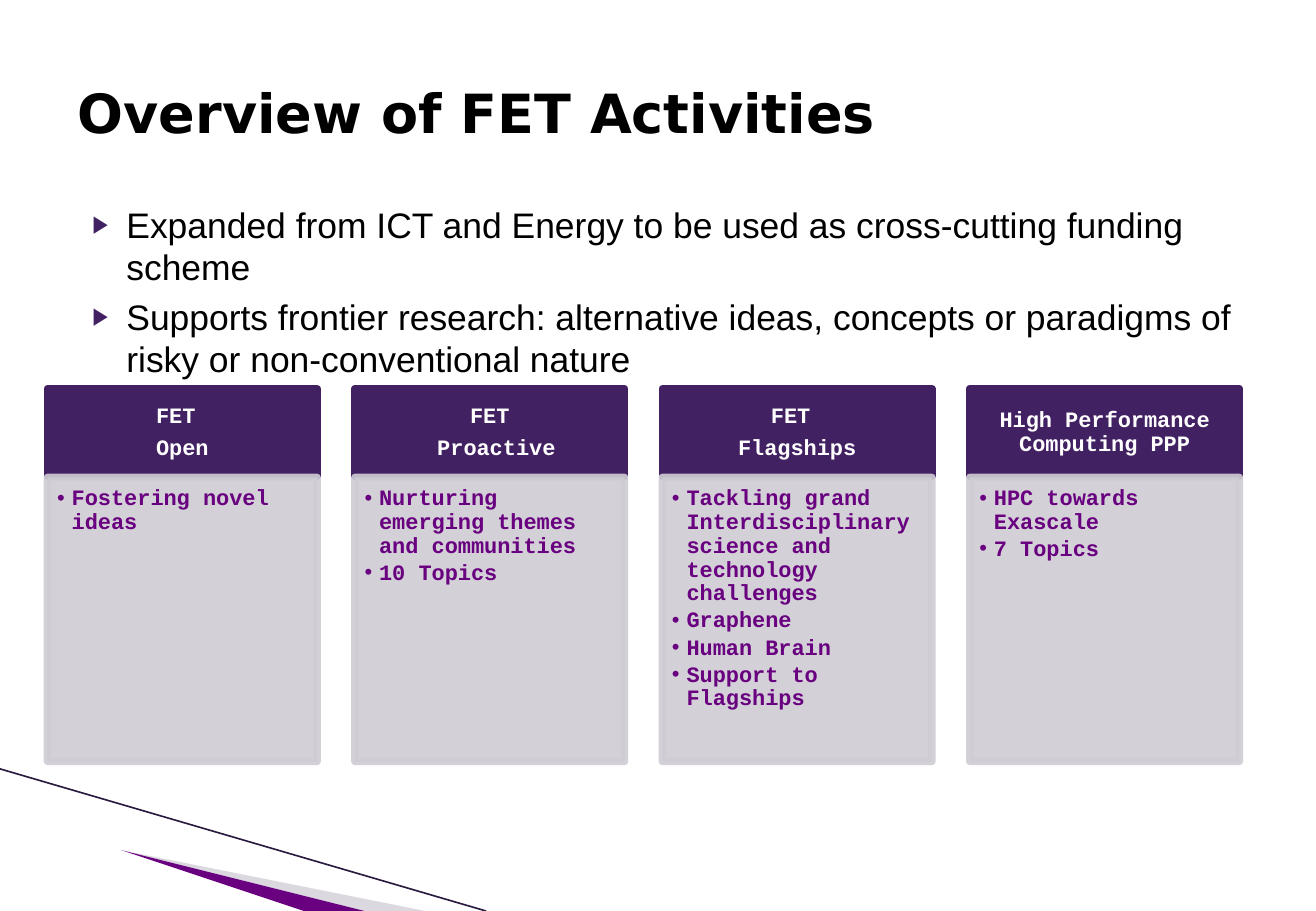
import pptx
import pptx.dml.color
import pptx.enum.shapes
import pptx.enum.text
import pptx.oxml
import pptx.oxml.ns
import pptx.util
from lxml import etree

Inches = pptx.util.Inches
Pt = pptx.util.Pt
ANCHOR = pptx.enum.text.MSO_ANCHOR
ALIGN = pptx.enum.text.PP_ALIGN
RECTANGLE = pptx.enum.shapes.MSO_SHAPE.RECTANGLE
STRAIGHT = pptx.enum.shapes.MSO_CONNECTOR.STRAIGHT

DARK, PURPLE, GREY, PALE = "422163", "68007F", "CFCDD3", "A7A2B1"
BLACK, WHITE, EDGE = "000000", "FFFFFF", "2A1A40"

POINTS = [
    "Expanded from ICT and Energy to be used as cross-cutting funding scheme",
    "Supports frontier research: alternative ideas, concepts or paradigms of "
    "risky or non-conventional nature",
]
ACTIVITIES = [
    (["FET ", "Open"], ["Fostering novel ideas"]),
    (["FET", " Proactive"],
     ["Nurturing emerging themes and communities", "10 Topics"]),
    (["FET ", "Flagships"],
     ["Tackling grand Interdisciplinary science and technology challenges",
      "Graphene", "Human Brain", "Support to Flagships"]),
    (["High Performance Computing PPP"], ["HPC towards Exascale", "7 Topics"]),
]


def paint(color_format, color, opacity=100):
    """Set a colour from a hex string, with opacity in percent."""
    color_format.rgb = pptx.dml.color.RGBColor.from_string(color)


def fill_shape(shape, color, opacity=100):
    """Give a shape or line a solid fill with the given opacity."""
    shape.fill.solid()
    paint(shape.fill.fore_color, color)
    if opacity < 100:
        parent = shape._element.spPr if hasattr(shape, "_element") else shape._get_or_add_ln()
        node = parent.find(pptx.oxml.ns.qn("a:solidFill"))[0]
        etree.SubElement(node, pptx.oxml.ns.qn("a:alpha"), val=str(opacity * 1000))


def set_font(para, name, size, color, bold=False):
    """Format the whole paragraph."""
    para.font.name = name
    para.font.size = Pt(size)
    para.font.bold = bold
    paint(para.font.color, color)


def add_bullet(para, symbol, color, percent, indent, hanging):
    """Give a paragraph a bullet and a hanging indent."""
    props = para._p.get_or_add_pPr()
    props.set("marL", str(Inches(indent)))
    props.set("indent", str(-Inches(hanging)))
    for tag, value in (("buClr", None), ("buSzPct", str(percent * 1000)),
                       ("buFont", None), ("buChar", symbol)):
        node = etree.SubElement(props, pptx.oxml.ns.qn("a:" + tag))
        if tag == "buClr":
            etree.SubElement(node, pptx.oxml.ns.qn("a:srgbClr"), val=color)
        elif tag == "buFont":
            node.set("typeface", "Arial")
        else:
            node.set("char" if tag == "buChar" else "val", value)


def fill_paragraphs(frame, texts):
    """Write one paragraph per text and return the paragraphs."""
    for _ in texts[1:]:
        frame.add_paragraph()
    for para, text in zip(frame.paragraphs, texts):
        para.add_run().text = text
    return frame.paragraphs


def place(shape, left, top, width, height):
    """Move and size a shape, in inches."""
    shape.left, shape.top = Inches(left), Inches(top)
    shape.width, shape.height = Inches(width), Inches(height)


def add_wedge(page, left, top, width, height):
    """Draw the decorative corner at the bottom of the page."""
    bands = [
        (PALE, 40, [(0.15, 0.17), (1.61, 1), (1.23, 1)]),
        (PURPLE, 100, [(0.15, 0.15), (1.23, 1), (1, 1)]),
    ]
    for color, opacity, corners in bands:
        points = [(left + x * width, top + y * height) for x, y in corners]
        builder = page.shapes.build_freeform(*points[0], scale=Inches(1))
        builder.add_line_segments(points[1:])
        band = builder.convert_to_shape()
        band.shadow.inherit = False
        band.line.fill.background()
        fill_shape(band, color, opacity)
    edge = page.shapes.add_connector(STRAIGHT, Inches(left), Inches(top),
                                     Inches(left + width), Inches(top + height))
    etree.SubElement(edge._element.spPr, pptx.oxml.ns.qn("a:effectLst"))
    paint(edge.line.color, EDGE)
    edge.line.width = Pt(0.95)


def add_heading(page, left, top, width, height):
    """Write the page title."""
    title = page.shapes.title
    place(title, left, top, width, height)
    title.text_frame.vertical_anchor = ANCHOR.MIDDLE
    para = fill_paragraphs(title.text_frame, ["Overview of FET Activities"])[0]
    para.alignment = ALIGN.LEFT
    set_font(para, "DejaVu Sans", 32, BLACK, True)


def add_points(page, left, top, width, height):
    """Write the introductory list."""
    body = page.placeholders[1]
    place(body, left, top, width, height)
    for number, para in enumerate(fill_paragraphs(body.text_frame, POINTS)):
        add_bullet(para, "▶", DARK, 68, 0.4, 0.28)
        para.space_before = Pt(4 if number else 0)
        set_font(para, "Arial", 21, BLACK)


def add_panel(page, left, top, width, height, color, opacity, margins, texts):
    """Draw one filled panel and return its paragraphs."""
    panel = page.shapes.add_shape(RECTANGLE, Inches(left), Inches(top),
                                  Inches(width), Inches(height))
    panel.shadow.inherit = False
    fill_shape(panel, color, opacity)
    panel.line.width = Pt(4.33)
    fill_shape(panel.line, color, opacity)
    frame = panel.text_frame
    frame.word_wrap = True
    frame.margin_left, frame.margin_top, frame.margin_right, frame.margin_bottom = (
        Inches(margin) for margin in margins)
    paras = fill_paragraphs(frame, texts)
    for para in paras:
        para.line_spacing = 0.9
    return frame, paras


def add_activity(page, left, top, width, height, names, topics):
    """Draw one activity column: a header over a list of topics."""
    header = 0.72
    frame, paras = add_panel(page, left, top, width, header, DARK, 100,
                             (0.1, 0.06, 0.1, 0.06), names)
    frame.vertical_anchor = ANCHOR.MIDDLE
    for para in paras:
        para.alignment = ALIGN.CENTER
        para.space_after = Pt(4.5)
        set_font(para, "Courier New", 13, WHITE, True)
    frame, paras = add_panel(page, left, top + header + 0.01, width,
                             height - header - 0.01, GREY, 90,
                             (0.08, 0.08, 0.1, 0.11), topics)
    frame.vertical_anchor = ANCHOR.TOP
    for para in paras:
        para.alignment = ALIGN.LEFT
        para.space_after = Pt(2)
        add_bullet(para, "•", PURPLE, 100, 0.12, 0.12)
        set_font(para, "Courier New", 13, PURPLE, True)


def main():
    """Build the deck."""
    deck = pptx.Presentation()
    deck.slide_width, deck.slide_height = Inches(10.83), Inches(7.5)
    page = deck.slides.add_slide(deck.slide_layouts[1])
    add_wedge(page, 0, 6.33, 4, 1.17)
    add_heading(page, 0.54, 0.3, 8.54, 1.25)
    add_points(page, 0.54, 1.62, 9.75, 4.89)
    for column, (names, topics) in enumerate(ACTIVITIES):
        add_activity(page, 0.39 + column * 2.53, 3.2, 2.22, 3.07, names, topics)
    deck.save("out.pptx")


if __name__ == "__main__":
    main()
